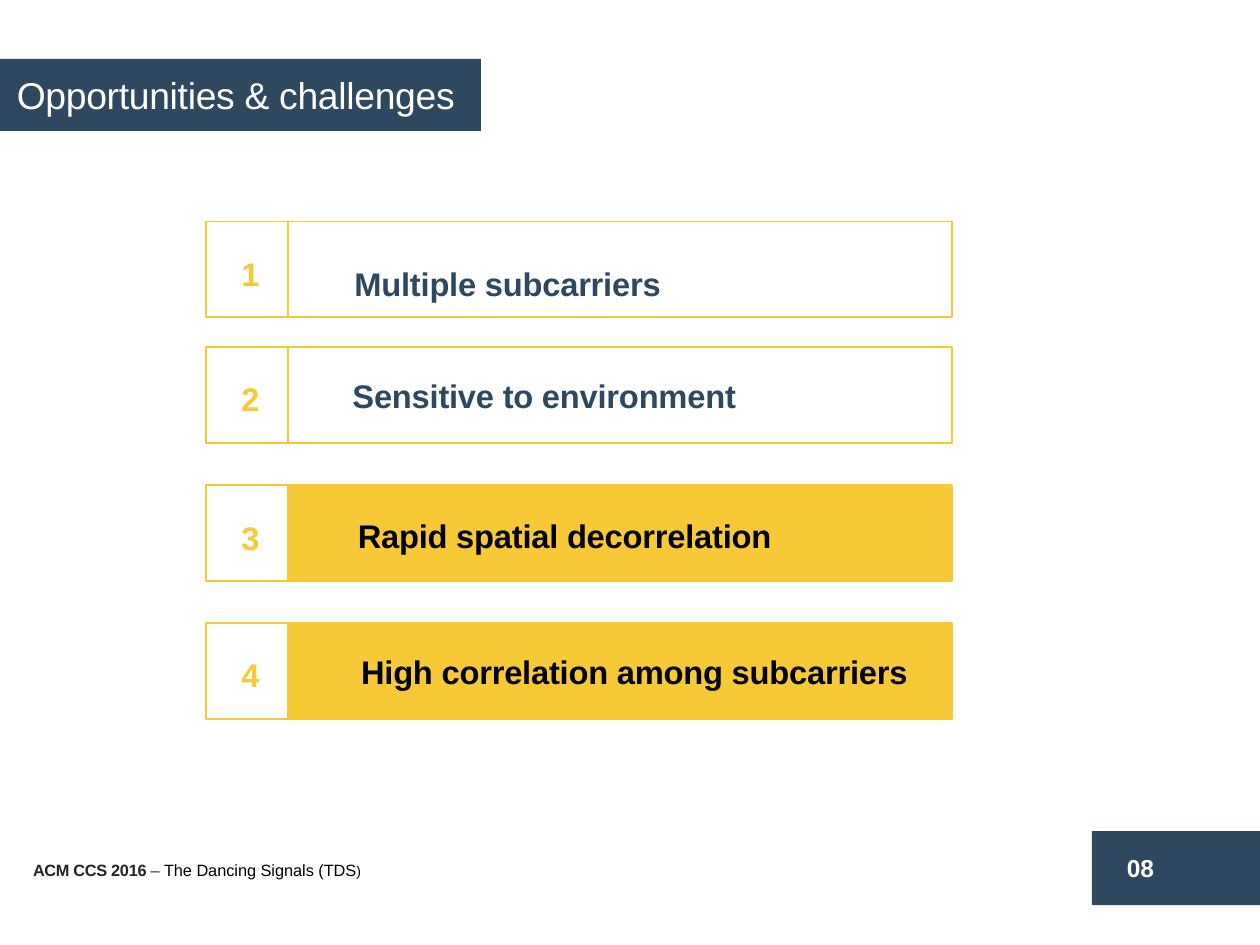
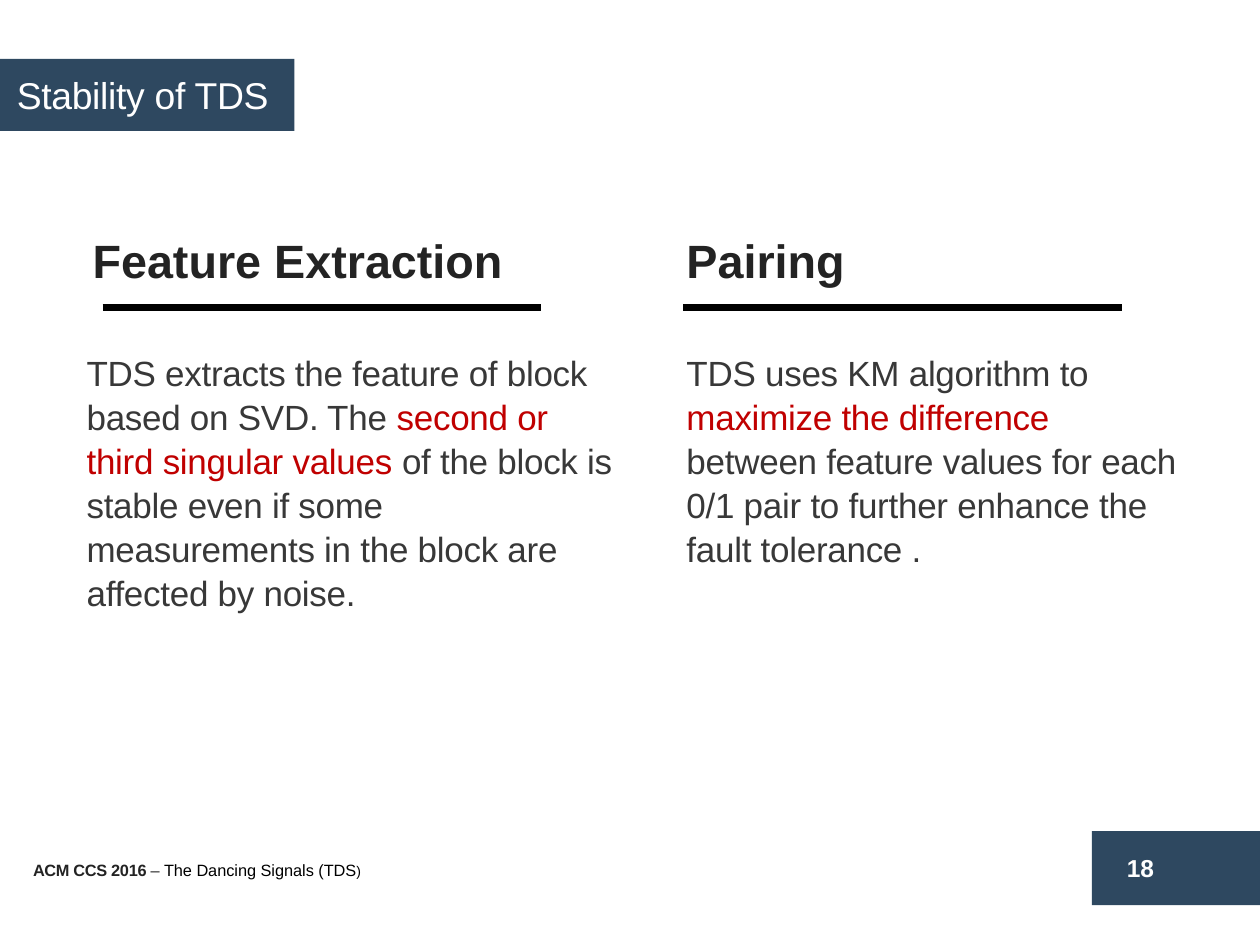
from pptx import Presentation
from pptx.dml.color import RGBColor
from pptx.enum.shapes import MSO_CONNECTOR, MSO_SHAPE
from pptx.enum.text import MSO_ANCHOR, MSO_AUTO_SIZE, PP_ALIGN
from pptx.oxml.ns import qn
from pptx.util import Cm, Pt
from lxml import etree

RECTANGLE = MSO_SHAPE.RECTANGLE
STRAIGHT = MSO_CONNECTOR.STRAIGHT
LEFT = PP_ALIGN.LEFT
TOP, MIDDLE = MSO_ANCHOR.TOP, MSO_ANCHOR.MIDDLE
FIXED_SIZE = MSO_AUTO_SIZE.NONE

FONT = "Arial"
NAVY, YELLOW, WHITE, BLACK = "2E4860", "F8C937", "FFFFFF", "000000"
INK, GREY, RED = "232323", "383838", "C00000"
TIGHT = -0.1
TITLE_ONLY = 5

ROW_LEFT, ROW_HEIGHT = 3.12, 1.45
BAR_LEFT, BAR_WIDTH = 4.35, 10.05
ROWS = [
    ("Multiple subcarriers", 3.35, 5.11, 3.86, False),
    ("Sensitive to environment", 5.25, 5.08, 5.56, False),
    ("Rapid spatial decorrelation", 7.34, 5.16, 7.67, True),
    ("High correlation among subcarriers", 9.42, 5.21, 9.73, True),
]


def colour(value):
    """Return the colour for a hex string."""
    return RGBColor.from_string(value)


def write(frame, spans, size, color=BLACK, bold=False, spacing=0, line_spacing=None,
          wrap=True, anchor=TOP):
    """Fill a text frame with one paragraph of (text, overrides) spans."""
    frame.word_wrap = wrap
    frame.auto_size = FIXED_SIZE
    frame.vertical_anchor = anchor
    para = frame.paragraphs[0]
    para.alignment = LEFT
    para.line_spacing = line_spacing
    for text, changes in [(spans, {})] if isinstance(spans, str) else spans:
        look = {"size": size, "color": color, "bold": bold, "spacing": spacing, **changes}
        span = para.add_run()
        span.text = text
        span.font.name = FONT
        span.font.size = Pt(look["size"])
        span.font.bold = look["bold"]
        span.font.color.rgb = colour(look["color"])
        if look["spacing"]:
            span._r.get_or_add_rPr().set("spc", str(round(look["spacing"] * 100)))


def add_text(slide, spans, left, top, width, height, **look):
    """Add a text box."""
    box = slide.shapes.add_textbox(Cm(left), Cm(top), Cm(width), Cm(height))
    write(box.text_frame, spans, **look)


def add_box(slide, left, top, width, height, fill=None, line=None):
    """Add a plain rectangle."""
    box = slide.shapes.add_shape(RECTANGLE, Cm(left), Cm(top), Cm(width), Cm(height))
    box.shadow.inherit = False
    if fill:
        box.fill.solid()
        box.fill.fore_color.rgb = colour(fill)
    else:
        box.fill.background()
    if line:
        box.line.color.rgb = colour(line)
        box.line.width = Pt(0.75)
    else:
        box.line.fill.background()


def add_rule(slide, left, top, width):
    """Add a thick horizontal line."""
    rule = slide.shapes.add_connector(STRAIGHT, Cm(left), Cm(top), Cm(left + width), Cm(top))
    rule.line.color.rgb = colour(BLACK)
    rule.line.width = Pt(3)
    etree.SubElement(rule._element.spPr, qn("a:effectLst"))


def add_slide(deck, title, title_width, number):
    """Add a slide with its title band, footer and page number."""
    slide = deck.slides.add_slide(deck.slide_layouts[TITLE_ONLY])
    band = slide.shapes.title
    band.left, band.top, band.width, band.height = Cm(0), Cm(0.89), Cm(title_width), Cm(1.09)
    band.fill.solid()
    band.fill.fore_color.rgb = colour(NAVY)
    write(band.text_frame, title, size=16, color=WHITE, spacing=TIGHT, wrap=False, anchor=MIDDLE)
    footer = [
        ("ACM CCS 2016 ", {"bold": True, "color": INK, "spacing": TIGHT}),
        ("– ", {"color": INK, "spacing": TIGHT}),
        ("The Dancing Signals (TDS", {}),
        (")", {"size": 6}),
    ]
    add_text(slide, footer, 0.25, 12.88, 6.15, 0.56, size=7)
    add_box(slide, 16.51, 12.57, 2.54, 1.12, fill=NAVY)
    add_text(slide, number, 16.79, 12.78, 0.97, 0.71, size=10.5, color=WHITE, bold=True,
             wrap=False)
    return slide


def add_row(slide, number, label, top, label_left, label_top, filled):
    """Add a numbered row with its bar and label."""
    add_box(slide, ROW_LEFT, top, BAR_LEFT - ROW_LEFT, ROW_HEIGHT, line=YELLOW)
    add_box(slide, BAR_LEFT, top, BAR_WIDTH, ROW_HEIGHT, fill=YELLOW if filled else None,
            line=YELLOW)
    add_text(slide, str(number), ROW_LEFT + 0.28, top + 0.36, 0.74, 0.86, size=14,
             color=YELLOW, bold=True, wrap=False)
    add_text(slide, label, label_left, label_top, 9, 0.86, size=14,
             color=BLACK if filled else NAVY, bold=True, spacing=TIGHT, wrap=False)


def add_column(slide, heading, body, heading_left, rule_left, body_left, body_width):
    """Add a heading, a rule and body text under it."""
    add_text(slide, heading, heading_left, 3.38, 8.2, 1.1, size=20, color=INK, bold=True)
    add_rule(slide, rule_left, 4.65, 6.63)
    add_text(slide, body, body_left, 5.16, body_width, 4.7, size=15, color=GREY,
             spacing=TIGHT, line_spacing=1.05)


def main():
    """Build and save the deck."""
    deck = Presentation()
    deck.slide_width, deck.slide_height = Cm(19.05), Cm(14.29)

    challenges = add_slide(deck, "Opportunities & challenges", 7.27, "08")
    for number, row in enumerate(ROWS, 1):
        add_row(challenges, number, *row)

    stability = add_slide(deck, "Stability of TDS", 4.45, "18")
    extraction = [
        ("TDS extracts the feature of block based on SVD. The ", {}),
        ("second or third singular values ", {"color": RED}),
        ("of the block is stable even if some measurements in the block are affected by noise.",
         {}),
    ]
    pairing = [
        ("TDS uses KM algorithm to ", {}),
        ("maximize the difference ", {"color": RED}),
        ("between feature values for each 0/1 pair to further enhance the fault tolerance .", {}),
    ]
    add_column(stability, "Feature Extraction", extraction, 1.15, 1.55, 1.06, 8.46)
    add_column(stability, "Pairing", pairing, 10.13, 10.33, 10.13, 7.98)

    deck.save("out.pptx")


if __name__ == "__main__":
    main()
